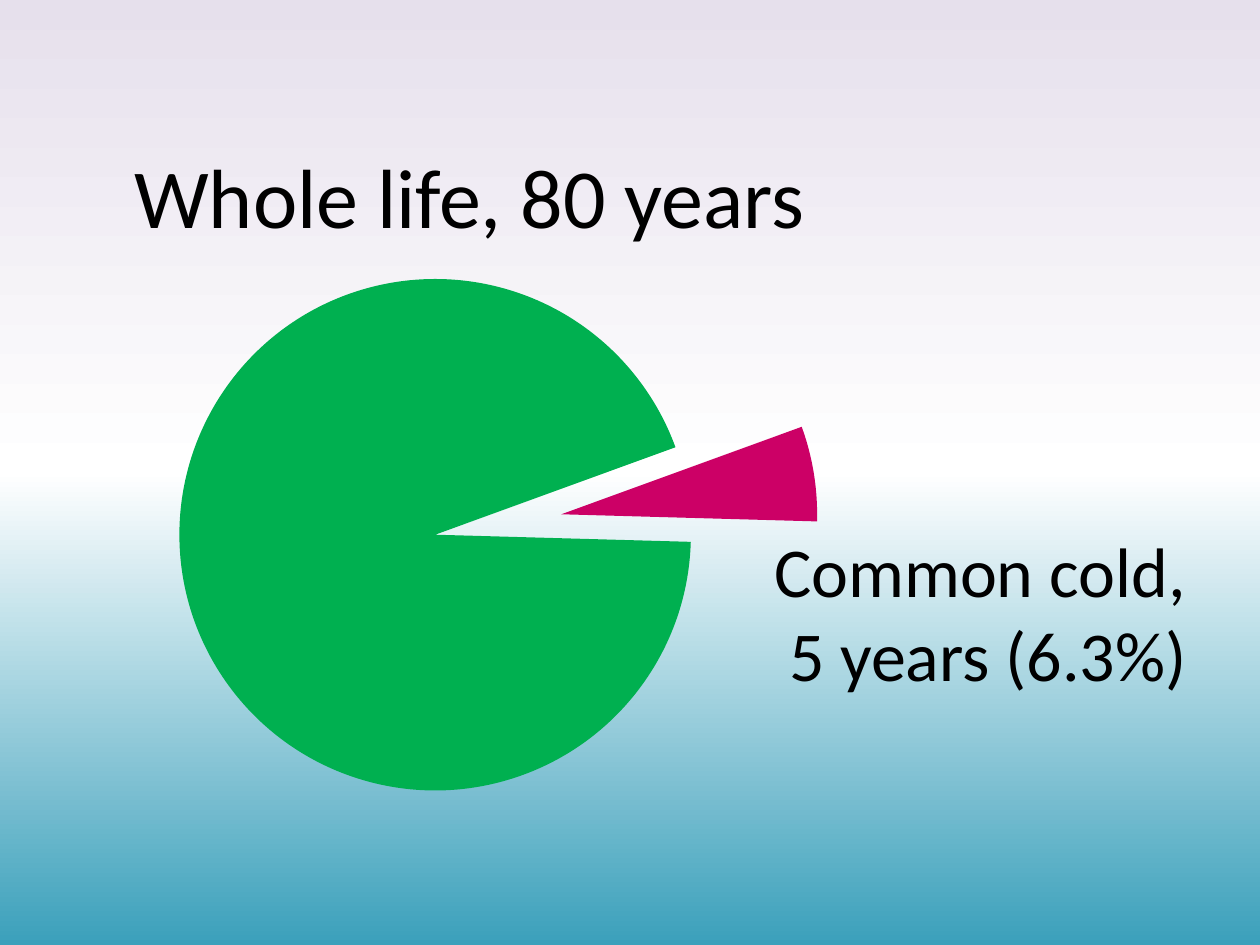
from copy import deepcopy
from dataclasses import dataclass

from pptx import Presentation
from pptx.chart.data import CategoryChartData as ChartData
from pptx.dml.color import RGBColor as Rgb
from pptx.enum.chart import XL_CHART_TYPE as ChartType
from pptx.enum.text import MSO_ANCHOR as Anchor, PP_ALIGN as Align
from pptx.oxml import parse_xml
from pptx.oxml.ns import nsdecls, qn
from pptx.util import Cm, Pt

COLORS = {
    "sky": "E6E0EC",
    "horizon": "FFFFFF",
    "sea": "3BA0BB",
    "cold": "CC0066",
    "life": "00B050",
    "text": "000000",
}
FONT = "Calibri"


@dataclass
class Area:
    left: float
    top: float
    width: float
    height: float

    def lengths(self) -> tuple:
        return Cm(self.left), Cm(self.top), Cm(self.width), Cm(self.height)


@dataclass
class Slice:
    name: str
    share: float
    color: str


SLICES = [Slice("1", 6, "cold"), Slice("2", 94, "life")]
PIE_AREA = Area(0.94, 3.78, 18.21, 13.59)
TITLE_AREA = Area(0.53, 2.46, 17.88, 2.92)
LABEL_AREA = Area(14.91, 10.72, 10.01, 3.2)
FIRST_ANGLE = 70
EXPLOSION = 25


def color(name: str) -> Rgb:
    return Rgb.from_string(COLORS[name])


def apply(target, values: dict) -> None:
    for name, value in values.items():
        setattr(target, name, value)


def paint_background(page, names: list) -> None:
    """Spread the named colours evenly from top to bottom."""
    fill = page.background.fill
    fill.gradient()
    fill.gradient_angle = 270
    stop_list = page.element.find(".//" + qn("a:gsLst"))
    while len(stop_list) < len(names):
        stop_list.append(deepcopy(stop_list[0]))
    for index, (stop, name) in enumerate(zip(fill.gradient_stops, names)):
        stop.position = index / (len(names) - 1)
        stop.color.rgb = color(name)


def write_text(box, area: Area, text: str, size: int) -> None:
    left, top, width, height = area.lengths()
    apply(box, {"left": left, "top": top, "width": width, "height": height})
    frame = box.text_frame
    apply(frame, {"word_wrap": True, "vertical_anchor": Anchor.MIDDLE})
    para = frame.paragraphs[0]
    para.text = text
    para.alignment = Align.CENTER
    for span in para.runs:
        apply(span.font, {"name": FONT, "size": Pt(size)})
        span.font.color.rgb = color("text")


def add_pie(page, area: Area, slices: list) -> None:
    data = ChartData()
    data.categories = [piece.name for piece in slices]
    data.add_series("Series 1", [piece.share for piece in slices])
    chart = page.shapes.add_chart(ChartType.PIE, *area.lengths(), data).chart
    apply(chart, {"has_title": False, "has_legend": False})
    apply(chart.font, {"name": FONT, "size": Pt(18)})
    chart.font.color.rgb = color("text")

    plot = chart.plots[0]
    plot.vary_by_categories = True
    series = plot.series[0]
    for index, piece in enumerate(slices):
        fill = series.points[index].format.fill
        fill.solid()
        fill.fore_color.rgb = color(piece.color)

    # Pull the slices apart and turn the pie
    ns = nsdecls("c")
    explosion = parse_xml(f'<c:explosion {ns} val="{EXPLOSION}"/>')
    series._element.find(qn("c:dPt")).addprevious(explosion)
    pie = series._element.getparent()
    for old in pie.findall(qn("c:firstSliceAng")):
        pie.remove(old)
    pie.append(parse_xml(f'<c:firstSliceAng {ns} val="{FIRST_ANGLE}"/>'))


def main() -> None:
    deck = Presentation()
    apply(deck, {"slide_width": Cm(25.4), "slide_height": Cm(19.05)})
    page = deck.slides.add_slide(deck.slide_layouts[5])
    paint_background(page, ["sky", "horizon", "sea"])

    # Pie and its two captions
    add_pie(page, PIE_AREA, SLICES)
    write_text(page.shapes.title, TITLE_AREA, "Whole life, 80 years", 48)
    label = page.shapes.add_textbox(*LABEL_AREA.lengths())
    write_text(label, LABEL_AREA, "Common cold, \v5 years (6.3%)", 40)

    deck.save("out.pptx")


if __name__ == "__main__":
    main()
